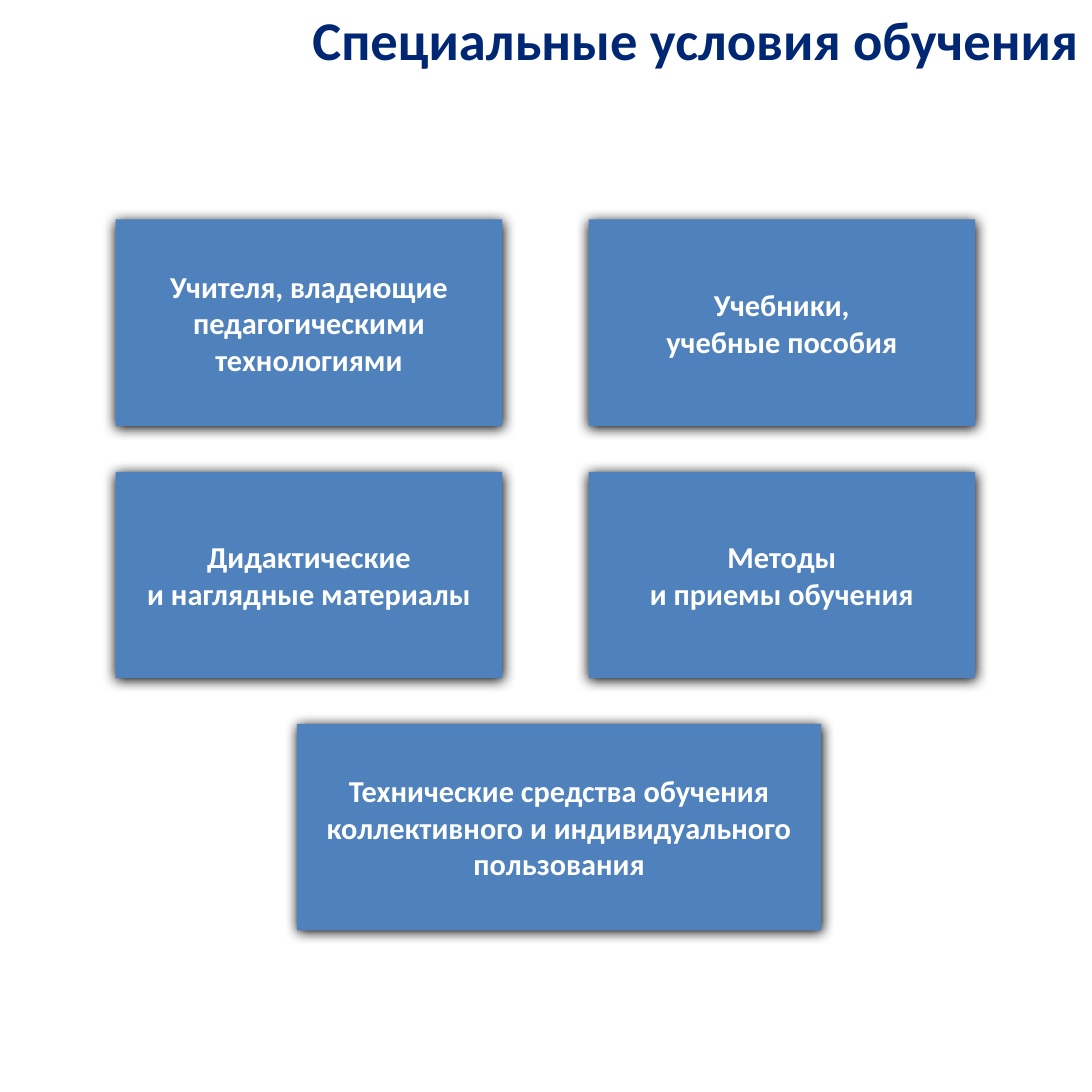
import dataclasses

import lxml.etree
import pptx
import pptx.dml.color
import pptx.enum.shapes
import pptx.enum.text
import pptx.oxml.ns
import pptx.slide
import pptx.text.text
import pptx.util

Inches = pptx.util.Inches
COLORS = {"title": "002774", "card": "4F81BD", "text": "FFFFFF", "shadow": "000000"}
FONT_NAME = "Calibri"
LEFT, TOP = 1.06, 2.01
COLUMN_STEP, ROW_STEP = 4.33, 2.31
CARD_WIDTH, CARD_HEIGHT = 3.54, 1.89


@dataclasses.dataclass
class Card:
    lines: list[str]
    row: int
    left: float = LEFT
    width: float = CARD_WIDTH


CARDS = [
    Card(["Учителя, владеющие", "педагогическими", "технологиями"], 0),
    Card(["Учебники,", "учебные пособия"], 0, LEFT + COLUMN_STEP),
    Card(["Дидактические", "и наглядные материалы"], 1),
    Card(["Методы", "и приемы обучения"], 1, LEFT + COLUMN_STEP),
    Card(
        ["Технические средства обучения", "коллективного и индивидуального", "пользования"],
        2,
        2.72,
        4.8,
    ),
]


def rgb(name: str) -> pptx.dml.color.RGBColor:
    return pptx.dml.color.RGBColor.from_string(COLORS[name])


def write_lines(
    frame: pptx.text.text.TextFrame, lines: list[str], size: int, color: str
) -> None:
    frame.text = "\n".join(lines)
    frame.vertical_anchor = pptx.enum.text.MSO_ANCHOR.MIDDLE
    for paragraph in frame.paragraphs:
        paragraph.alignment = pptx.enum.text.PP_ALIGN.CENTER
        paragraph.font.name = FONT_NAME
        paragraph.font.size = pptx.util.Pt(size)
        paragraph.font.bold = True
        paragraph.font.color.rgb = rgb(color)


def draw_card(slide: pptx.slide.Slide, card: Card) -> None:
    shape = slide.shapes.add_shape(
        pptx.enum.shapes.MSO_SHAPE.RECTANGLE,
        Inches(card.left),
        Inches(TOP + card.row * ROW_STEP),
        Inches(card.width),
        Inches(CARD_HEIGHT),
    )
    shape.fill.solid()
    shape.fill.fore_color.rgb = rgb("card")
    shape.line.fill.background()
    shape.shadow.inherit = False
    qualified = pptx.oxml.ns.qn
    effects = shape.element.spPr.find(qualified("a:effectLst"))
    shadow = lxml.etree.SubElement(
        effects,
        qualified("a:outerShdw"),
        blurRad=str(pptx.util.Pt(8.5)),
        dist=str(pptx.util.Pt(1)),
        dir="5400000",
        algn="ctr",
        rotWithShape="0",
    )
    lxml.etree.SubElement(shadow, qualified("a:srgbClr"), val=COLORS["shadow"])
    frame = shape.text_frame
    frame.word_wrap = False
    frame.margin_left = frame.margin_right = Inches(0.13)
    frame.margin_top = frame.margin_bottom = Inches(0.07)
    write_lines(frame, card.lines, 20, "text")


def main() -> None:
    presentation = pptx.Presentation()
    presentation.slide_width = presentation.slide_height = Inches(10)
    slide = presentation.slides.add_slide(presentation.slide_layouts[5])
    title = slide.shapes.title
    title.left, title.top = Inches(1.91), Inches(-0.28)
    title.width, title.height = Inches(8.92), Inches(1.27)
    write_lines(title.text_frame, ["Специальные условия обучения"], 36, "title")
    for card in CARDS:
        draw_card(slide, card)
    presentation.save("out.pptx")


if __name__ == "__main__":
    main()
